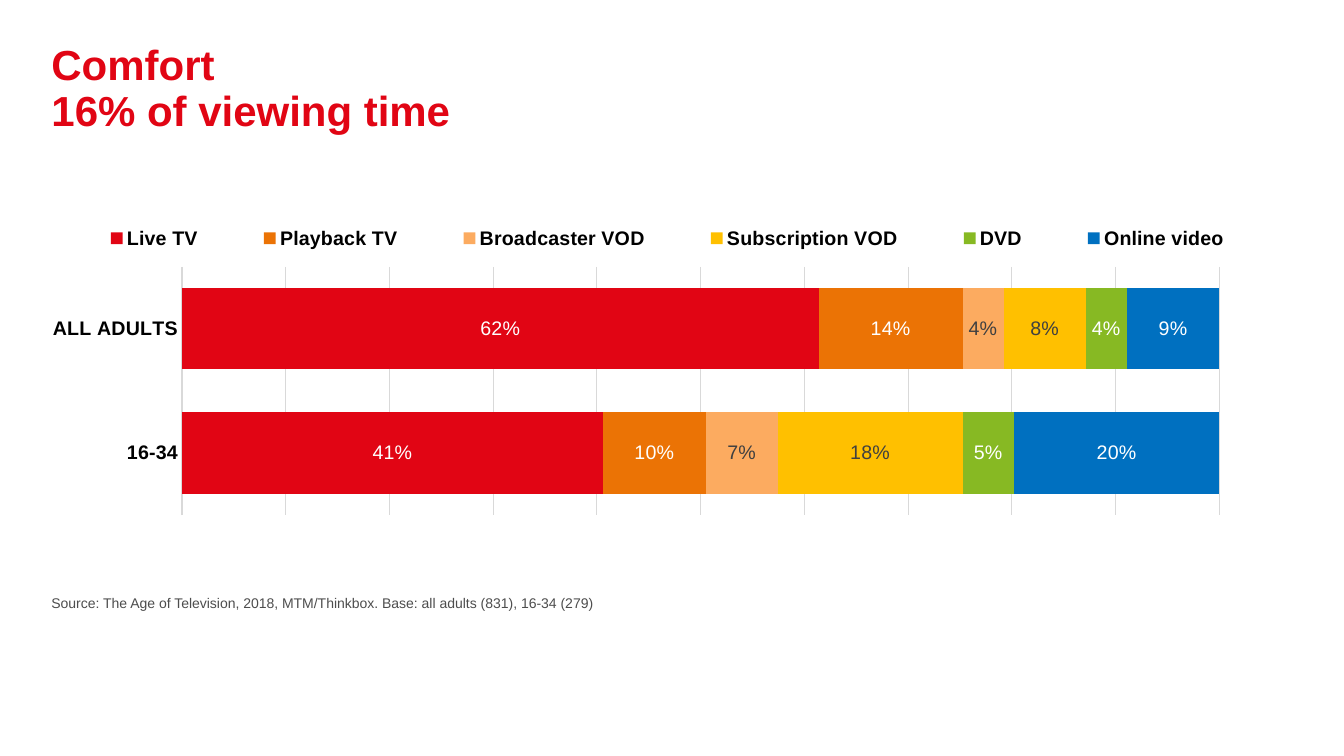
import pptx
import pptx.chart.data
import pptx.dml.color
import pptx.enum.chart
import pptx.enum.text
import pptx.oxml
import pptx.oxml.ns
import pptx.util

Inches = pptx.util.Inches
Pt = pptx.util.Pt

COLORS = {
    "red": "E10514",
    "orange": "EB7305",
    "peach": "FCAB60",
    "yellow": "FFC000",
    "green": "87B923",
    "blue": "0070C0",
    "white": "FFFFFF",
    "black": "000000",
    "dark": "404040",
    "gray": "4D4D4D",
    "grid": "D9D9D9",
}
GROUPS = ["16-34", "ALL ADULTS"]
SERIES = [
    ("Live TV", (0.41, 0.62), "red", "white"),
    ("Playback TV", (0.10, 0.14), "orange", "white"),
    ("Broadcaster VOD", (0.07, 0.04), "peach", "dark"),
    ("Subscription VOD", (0.18, 0.08), "yellow", "dark"),
    ("DVD", (0.05, 0.04), "green", "white"),
    ("Online video", (0.20, 0.09), "blue", "white"),
]


def color(name):
    return pptx.dml.color.RGBColor.from_string(COLORS[name])


def style(font, size, name, bold=False):
    font.name = "Arial"
    font.size = Pt(size)
    font.bold = bold
    font.color.rgb = color(name)


def rule(line):
    line.color.rgb = color("grid")
    line.width = Pt(0.75)


def fill_text(shape, box, text, size, name, bold=False):
    shape.left, shape.top, shape.width, shape.height = map(Inches, box)
    frame = shape.text_frame
    frame.text = text
    frame.word_wrap = True
    frame.auto_size = pptx.enum.text.MSO_AUTO_SIZE.NONE
    frame.vertical_anchor = pptx.enum.text.MSO_ANCHOR.TOP
    para = frame.paragraphs[0]
    para.alignment = pptx.enum.text.PP_ALIGN.LEFT
    para.space_before = Pt(0)
    para.line_spacing = 0.9
    props = para._p.get_or_add_pPr()
    props.set("marL", "0")
    props.set("indent", "0")
    props.append(pptx.oxml.parse_xml(
        f"<a:buNone {pptx.oxml.ns.nsdecls('a')}/>"))
    for run in para.runs:
        style(run.font, size, name, bold)


def place(parent, index, box, inner=False):
    for old in parent.findall(pptx.oxml.ns.qn("c:layout")):
        parent.remove(old)
    target = '<c:layoutTarget val="inner"/>' if inner else ""
    modes = "".join(f'<c:{k}Mode val="edge"/>' for k in "xy")
    sizes = "".join(f'<c:{k} val="{v}"/>' for k, v in zip("xywh", box))
    parent.insert(index, pptx.oxml.parse_xml(
        f"<c:layout {pptx.oxml.ns.nsdecls('c')}><c:manualLayout>"
        f"{target}{modes}{sizes}</c:manualLayout></c:layout>"))


def add_bars(slide, box):
    data = pptx.chart.data.CategoryChartData(number_format="0%")
    data.categories = GROUPS
    for name, values, _, _ in SERIES:
        data.add_series(name, values)
    kind = pptx.enum.chart.XL_CHART_TYPE.BAR_STACKED_100
    chart = slide.shapes.add_chart(kind, *map(Inches, box), data).chart
    chart.has_title = False
    style(chart.font, 10, "black")
    plot = chart.plots[0]
    plot.gap_width = 53
    plot.overlap = 100
    plot.vary_by_categories = False
    for series, (_, _, fill, ink) in zip(plot.series, SERIES):
        series.format.fill.solid()
        series.format.fill.fore_color.rgb = color(fill)
        labels = series.data_labels
        labels.show_value = True
        labels.number_format = "0%"
        labels.number_format_is_linked = False
        style(labels.font, 14, ink)
    return chart


def set_axes(chart):
    none = pptx.enum.chart.XL_TICK_MARK.NONE
    groups = chart.category_axis
    groups.major_tick_mark = groups.minor_tick_mark = none
    style(groups.tick_labels.font, 14, "black", True)
    rule(groups.format.line)
    share = chart.value_axis
    share.visible = False
    share.minimum_scale = 0
    share.maximum_scale = 1
    share.major_unit = 0.1
    share.has_major_gridlines = True
    rule(share.major_gridlines.format.line)
    share.tick_labels.number_format = "0%"
    share.tick_labels.number_format_is_linked = False


def set_key(chart):
    chart.has_legend = True
    key = chart.legend
    key.position = pptx.enum.chart.XL_LEGEND_POSITION.BOTTOM
    key.include_in_layout = False
    style(key.font, 14, "black", True)
    root = chart.element
    place(root.find(".//" + pptx.oxml.ns.qn("c:legend")), 1,
          (0, 0.11, 1, 0.1))
    place(root.find(".//" + pptx.oxml.ns.qn("c:plotArea")), 0,
          (0.106, 0.239, 0.842, 0.686), True)


def main():
    deck = pptx.Presentation()
    deck.slide_width = Inches(13.33)
    deck.slide_height = Inches(7.5)
    slide = deck.slides.add_slide(deck.slide_layouts[1])
    fill_text(slide.shapes.title, (0.41, 0.39, 12.4, 1.12),
              "Comfort \v16% of viewing time", 30, "red", True)
    fill_text(slide.placeholders[1], (0.41, 5.87, 12.4, 0.33),
              "Source: The Age of Television, 2018, MTM/Thinkbox. "
              "Base: all adults (831), 16-34 (279)", 10, "gray")
    chart = add_bars(slide, (0.51, 1.79, 12.22, 3.59))
    set_axes(chart)
    set_key(chart)
    deck.save("out.pptx")


if __name__ == "__main__":
    main()
